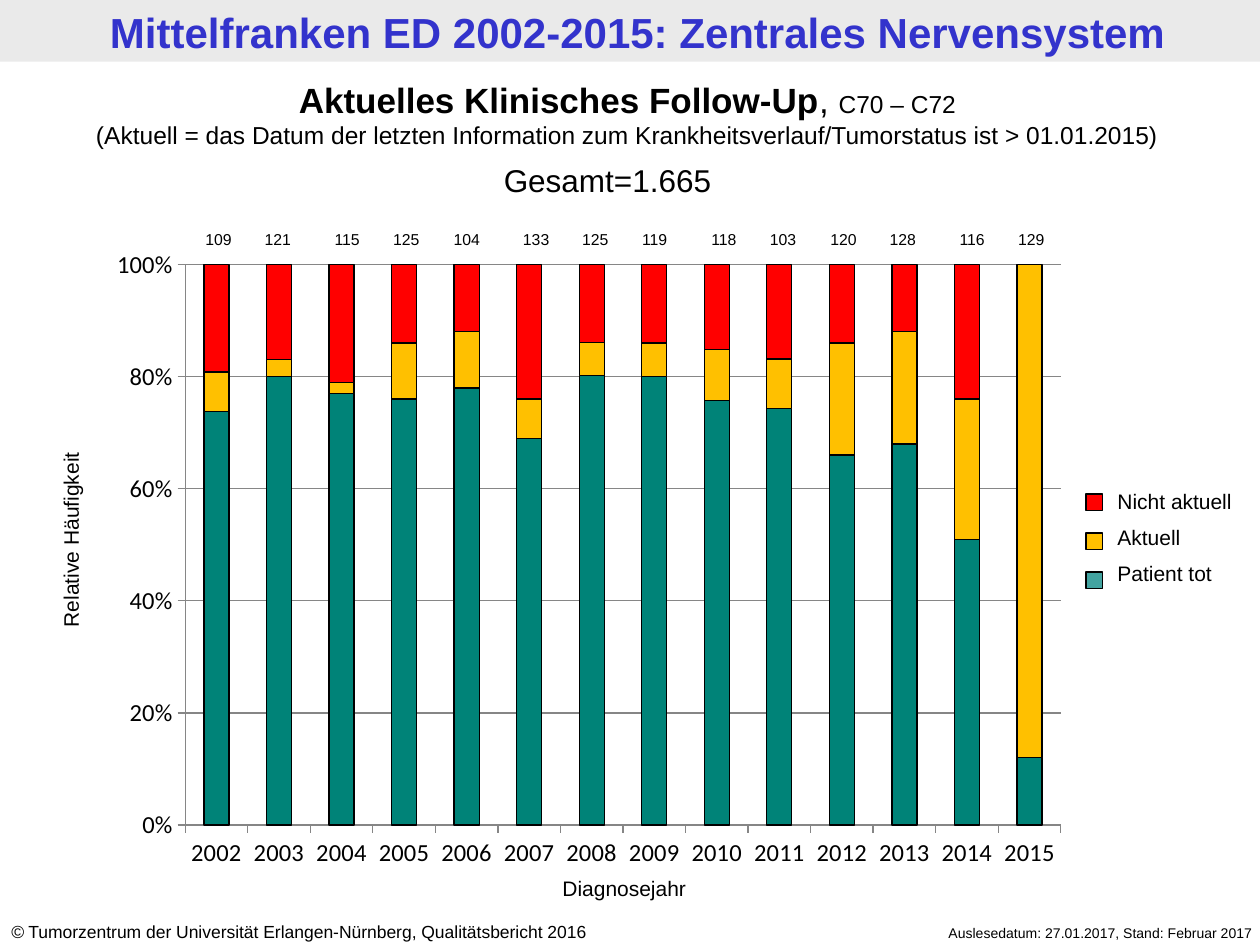
from lxml.etree import SubElement
from pptx import Presentation
from pptx.chart.data import CategoryChartData
from pptx.dml.color import RGBColor
from pptx.enum.chart import XL_CHART_TYPE, XL_TICK_MARK
from pptx.enum.shapes import MSO_SHAPE
from pptx.enum.text import MSO_ANCHOR, PP_ALIGN
from pptx.oxml import parse_xml
from pptx.oxml.ns import nsdecls, qn
from pptx.util import Inches, Pt

LEFT, CENTER, RIGHT = PP_ALIGN.LEFT, PP_ALIGN.CENTER, PP_ALIGN.RIGHT
BLACK, GRAY, BAND, BLUE = "000000", "868686", "EAEAEA", "3333CC"
TEAL, LEGEND_TEAL, AMBER, RED = "008378", "008380", "FFC000", "FF0000"


def rgb(value):
    return RGBColor.from_string(value)


class SlideBuilder:
    font = "Arial"
    chart_font = "Calibri"

    def __init__(self, s):
        self.s = s

    def format_run(self, r, size, color=BLACK, bold=False, italic=False):
        r.font.name = self.font
        r.font.size = Pt(size)
        r.font.bold = bold
        r.font.italic = italic
        r.font.color.rgb = rgb(color)

    def title(self, text, box, size, color):
        sp = self.s.shapes.title
        sp.left, sp.top, sp.width, sp.height = map(Inches, box)
        tf = sp.text_frame
        tf.text = text
        tf.vertical_anchor = MSO_ANCHOR.MIDDLE
        tf.margin_top = tf.margin_bottom = Inches(0.04)
        p = tf.paragraphs[0]
        p.alignment = CENTER
        self.format_run(p.runs[0], size, color, bold=True)

    def text(self, box, paragraphs, align=LEFT, gap=0, rotation=0):
        """Each paragraph is a list of (text, size, style) runs."""
        sp = self.s.shapes.add_textbox(*map(Inches, box))
        sp.rotation = rotation
        tf = sp.text_frame
        tf.word_wrap = True
        for i, runs in enumerate(paragraphs):
            p = tf.add_paragraph() if i else tf.paragraphs[0]
            p.alignment = align
            if i:
                p.space_before = Pt(gap)
            for text, size, style in runs:
                r = p.add_run()
                r.text = text
                self.format_run(r, size, **style)

    def label(self, box, text, size, align=LEFT, rotation=0):
        self.text(box, [[(text, size, {})]], align, rotation=rotation)

    def rect(self, box, fill, line=None, alpha=None):
        sp = self.s.shapes.add_shape(MSO_SHAPE.RECTANGLE, *map(Inches, box))
        sp.shadow.inherit = False
        sp.fill.solid()
        sp.fill.fore_color.rgb = rgb(fill)
        if alpha:
            color = sp.fill._xPr.find(".//" + qn("a:srgbClr"))
            SubElement(color, qn("a:alpha")).set("val", str(alpha * 1000))
        if line:
            sp.line.color.rgb = rgb(line)
            sp.line.width = Pt(0.75)
        else:
            sp.line.fill.background()

    def stacked_chart(self, box, categories, series, plot_area):
        data = CategoryChartData(number_format="0")
        data.categories = categories
        for name, values, _ in series:
            data.add_series(name, values)
        chart = self.s.shapes.add_chart(
            XL_CHART_TYPE.COLUMN_STACKED_100, *map(Inches, box), data).chart
        chart.has_legend = chart.has_title = False
        chart.font.name = self.chart_font
        chart.font.size = Pt(14)
        chart.font.color.rgb = rgb(BLACK)

        plot = chart.plots[0]
        plot.gap_width, plot.overlap = 150, 100
        plot.vary_by_categories = False
        for bars, (_, _, color) in zip(plot.series, series):
            bars.format.fill.solid()
            bars.format.fill.fore_color.rgb = rgb(color)
            bars.format.line.color.rgb = rgb(BLACK)
            bars.format.line.width = Pt(0.75)

        for axis in (chart.category_axis, chart.value_axis):
            axis.major_tick_mark = XL_TICK_MARK.OUTSIDE
            axis.minor_tick_mark = XL_TICK_MARK.NONE
            axis.tick_labels.font.size = Pt(14)
            axis.format.line.color.rgb = rgb(GRAY)
        axis = chart.value_axis
        axis.minimum_scale, axis.maximum_scale, axis.major_unit = 0, 1, 0.2
        axis.has_major_gridlines = True
        axis.major_gridlines.format.line.color.rgb = rgb(GRAY)
        axis.tick_labels.number_format = "0%"
        axis.tick_labels.number_format_is_linked = False
        self.fix_plot_area(chart, box, plot_area)

    def fix_plot_area(self, chart, box, plot_area):
        left, top, width, height = box
        x, y, w, h = plot_area
        parts = {"x": (x - left) / width, "y": (y - top) / height,
                 "w": w / width, "h": h / height}
        area = chart.element.find(".//" + qn("c:plotArea"))
        for old in area.findall(qn("c:layout")):
            area.remove(old)
        modes = "".join(f'<c:{k}Mode val="edge"/>' for k in "xy")
        sizes = "".join(f'<c:{k} val="{v:.4f}"/>' for k, v in parts.items())
        area.insert(0, parse_xml(
            f'<c:layout {nsdecls("c")}><c:manualLayout>'
            f'<c:layoutTarget val="inner"/>{modes}{sizes}'
            '</c:manualLayout></c:layout>'))


def main():
    prs = Presentation()
    prs.slide_width, prs.slide_height = Inches(10), Inches(7.5)
    b = SlideBuilder(prs.slides.add_slide(prs.slide_layouts[5]))

    # Header band and title
    b.rect((0, 0, 10, 0.49), BAND)
    title = b.s.shapes.title.element
    title.getparent().append(title)  # title in front of the band
    b.title("Mittelfranken ED 2002-2015: Zentrales Nervensystem",
            (0.06, 0.01, 10, 0.49), 24, BLUE)

    # Footer
    b.text((-0.01, 7.26, 5.24, 0.27), [[
        ("©", 10, {"italic": True}),
        (" Tumorzentrum der Universität Erlangen-Nürnberg, "
         "Qualitätsbericht 2016", 10, {})]])
    b.label((6.65, 7.29, 3.39, 0.24),
            "Auslesedatum: 27.01.2017, Stand: Februar 2017", 8, RIGHT)

    # Chart with the share of each follow-up status
    years = [str(year) for year in range(2002, 2016)]
    dead = (73, 80, 77, 76, 78, 69, 81, 80, 75, 75, 66, 68, 51, 12)
    current = (7, 3, 2, 10, 10, 7, 6, 6, 9, 9, 20, 20, 25, 88)
    outdated = (19, 17, 21, 14, 12, 24, 14, 14, 15, 17, 14, 12, 24, None)
    b.stacked_chart((0.77, 1.87, 7.8, 5.11), years,
                    [("Series 1", dead, TEAL),
                     ("Series 2", current, AMBER),
                     ("Series 3", outdated, RED)],
                    plot_area=(1.47, 2.1, 6.95, 4.45))

    # Axis titles
    b.label((-0.64, 4.13, 2.41, 0.31), "Relative Häufigkeit", 12, CENTER, 270)
    b.label((3.83, 6.9, 2.25, 0.31), "Diagnosejahr", 12, CENTER)

    # Heading and total
    b.text((-0.04, 0.57, 10.04, 0.67), [
        [("Aktuelles Klinisches Follow-Up", 20, {"bold": True}),
         (", ", 20, {}), ("C70 – C72", 14, {})],
        [("(Aktuell = das Datum der letzten Information zum "
          "Krankheitsverlauf/Tumorstatus ist > 01.01.2015)", 14, {})],
    ], CENTER)
    b.label((3.9, 1.23, 2.2, 0.4), "Gesamt=1.665", 18)

    # Legend
    names = ("Nicht aktuell", "Aktuell", "Patient tot")
    b.text((8.77, 3.83, 1.42, 0.91), [[(n, 12, {})] for n in names], gap=6)
    keys = ((RED, None), (AMBER, None), (LEGEND_TEAL, 74))
    for i, (color, alpha) in enumerate(keys):
        b.rect((8.62, 3.92 + 0.31 * i, 0.13, 0.13), color, BLACK, alpha)

    # Number of cases above each column
    cases = ((109, 1.46), (121, 1.93), (115, 2.48), (125, 2.95), (104, 3.43),
             (133, 3.98), (125, 4.45), (119, 4.92), (118, 5.47), (103, 5.94),
             (120, 6.42), (128, 6.89), (116, 7.44), (129, 7.91))
    for count, left in cases:
        b.label((left, 1.77, 0.55, 0.25), str(count), 9, CENTER)

    prs.save("out.pptx")


if __name__ == "__main__":
    main()
